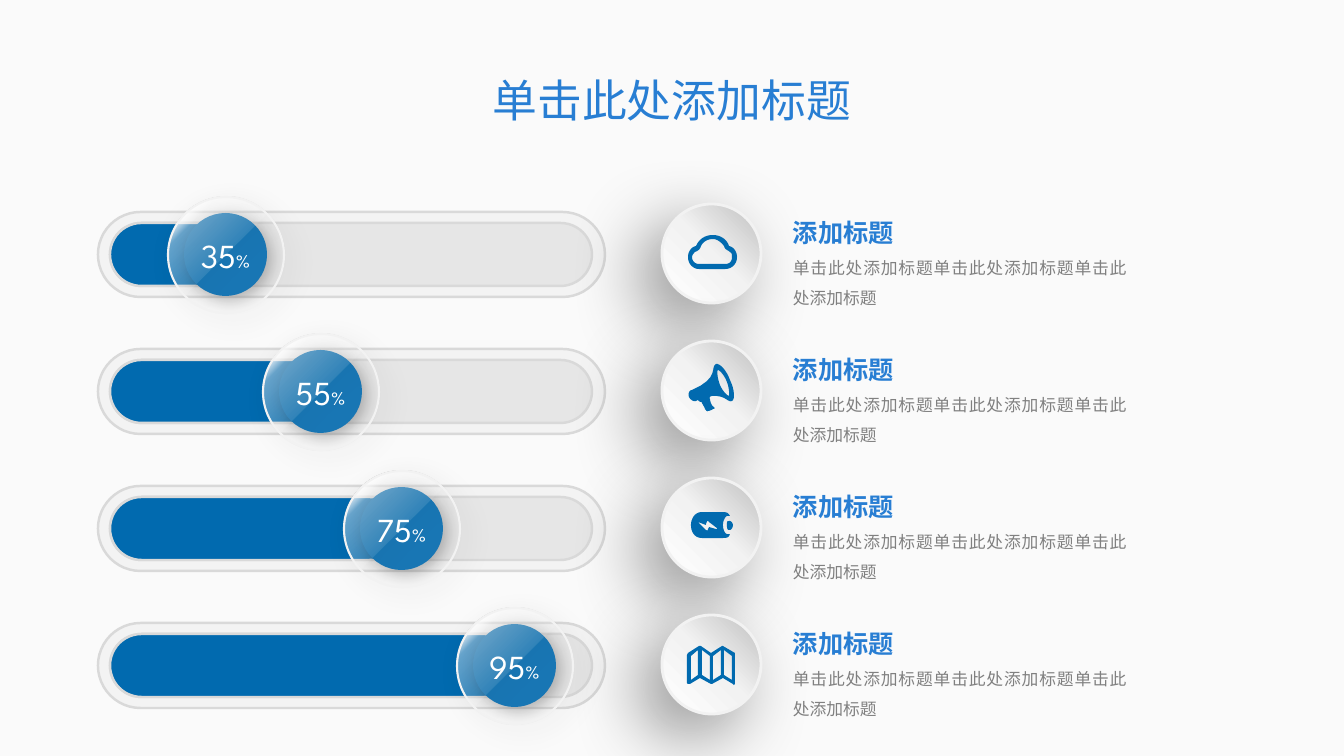
from lxml import etree
from pptx import Presentation
from pptx import util as u
from pptx.dml.color import RGBColor
from pptx.enum import shapes, text
from pptx.oxml.ns import qn

PX = 914400 / 100.8
PITCH = 137
COLORS = {
    "background": "FAFAFA", "title": "287ED3", "body": "808080", "blue": "016AAF",
    "white": "FFFFFF", "frame": "F3F3F3", "track": "E6E6E6", "outline": "D9D9D9",
    "rim": "F2F2F2", "shade": "BFBFBF", "black": "000000",
}
LATIN, CJK = "League Spartan", "Noto Sans CJK SC"
GLASS = [(15, "white", 87), (22, "white", 40), (50, "white", 19), (50, "white", 10)]
DISC = [(0, "white", 100), (51, "rim", 100), (100, "shade", 100)]

# Bar length, knob left edge, value
LEVELS = [(125, 184, "35"), (223, 279, "55"), (291, 360, "75"), (406, 473, "95")]

# Each contour is a start point followed by line ends (2 numbers) or Bézier curves (6 numbers)
CLOUD = [
    [(63, 65), (37, 65), (31, 65, 26, 60, 26, 53), (26, 48, 29, 43, 34, 42),
     (37, 35, 43, 31, 51, 31), (58, 31, 65, 35, 67, 42), (72, 43, 75, 48, 75, 53),
     (75, 60, 70, 65, 63, 65)],
    [(68, 48), (66, 46, 63, 46, 62, 42), (59, 38, 55, 35, 51, 35), (45, 35, 41, 38, 39, 42),
     (38, 46, 35, 47, 33, 48), (32, 49, 30, 51, 30, 53), (30, 57, 33, 60, 37, 60), (63, 60),
     (68, 60, 70, 57, 70, 53), (70, 51, 70, 49, 68, 48)],
]
MEGAPHONE = [
    [(68, 39), (65, 30, 58, 22, 54, 23), (48, 26, 58, 37, 30, 49), (27, 49, 26, 53, 27, 56),
     (28, 58, 31, 61, 34, 60), (36, 59), (38, 62, 40, 60, 40, 62), (41, 64, 43, 67, 43, 68),
     (44, 69, 45, 71, 46, 70), (47, 70, 50, 69, 51, 68), (53, 68, 53, 67, 52, 66),
     (52, 66, 50, 65, 50, 64), (49, 63, 48, 59, 48, 58), (47, 57, 48, 55, 50, 55),
     (64, 54, 66, 62, 70, 60), (73, 59, 73, 49, 68, 39)],
    [(67, 55), (66, 55, 61, 51, 58, 44), (55, 36, 55, 29, 56, 29), (57, 29, 62, 33, 65, 41),
     (68, 49, 67, 54, 67, 55)],
]
BATTERY = [
    [(61, 47), (61, 42, 64, 38, 65, 38), (68, 38), (67, 36, 66, 34, 61, 34), (40, 34),
     (32, 34, 29, 42, 29, 47), (29, 53, 32, 60, 40, 60), (61, 60), (66, 60, 67, 59, 68, 56),
     (65, 56), (64, 56, 61, 53, 61, 47)],
    [(55, 51), (54, 51), (47, 49), (47, 49, 47, 50, 46, 51), (46, 52, 46, 53, 44, 52),
     (37, 45), (36, 44), (44, 47), (44, 47, 44, 45, 45, 44), (45, 43, 46, 42, 47, 44), (55, 50)],
    [(68, 43), (65, 43, 65, 43, 65, 47), (65, 52, 66, 52, 68, 52), (69, 52, 71, 50, 71, 47),
     (71, 45, 69, 43, 68, 43)],
]
MAP = [
    [(73, 38), (61, 31), (60, 31), (49, 38), (39, 31), (37, 31), (26, 38), (25, 40), (25, 68),
     (26, 69), (28, 69), (38, 63), (49, 69), (50, 69), (61, 63), (71, 69), (72, 70), (73, 69),
     (73, 40)],
    [(36, 60), (29, 65), (29, 41), (36, 35)],
    [(48, 65), (40, 60), (40, 35), (48, 41)],
    [(59, 60), (51, 65), (51, 41), (59, 35)],
    [(70, 65), (62, 60), (62, 35), (70, 41)],
]


def px(*lengths):
    return [u.Emu(round(length * PX)) for length in lengths]


def rgb(name):
    return RGBColor.from_string(COLORS[name])


def add_color(parent, color, alpha):
    node = etree.SubElement(parent, qn("a:srgbClr"), val=COLORS[color])
    etree.SubElement(node, qn("a:alpha"), val=str(alpha * 1000))


def flatten(contour, steps=8):
    """Turn a contour of lines and Bézier curves into points."""
    points = [contour[0]]
    for segment in contour[1:]:
        if len(segment) == 2:
            points.append(segment)
            continue
        (x0, y0), (x1, y1, x2, y2, x3, y3) = points[-1], segment
        for step in range(1, steps + 1):
            t = step / steps
            a, b, c, d = (1 - t) ** 3, 3 * t * (1 - t) ** 2, 3 * t * t * (1 - t), t ** 3
            points.append((a * x0 + b * x1 + c * x2 + d * x3, a * y0 + b * y1 + c * y2 + d * y3))
    return points


class Board:
    def __init__(self, slide):
        self.slide = slide
        slide.background.fill.solid()
        slide.background.fill.fore_color.rgb = rgb("background")

    def style(self, paragraph, size, color, latin=LATIN, bold=False):
        font = paragraph.font
        font.size, font.bold, font.name = u.Pt(size), bold, latin
        font.color.rgb = rgb(color)
        etree.SubElement(font._element, qn("a:ea"), typeface=CJK)

    def title(self, wording, *box):
        title = self.slide.shapes.title
        title.left, title.top, title.width, title.height = px(*box)
        frame = title.text_frame
        frame.text = wording
        frame.word_wrap = False
        frame.vertical_anchor = text.MSO_ANCHOR.MIDDLE
        frame.paragraphs[0].alignment = text.PP_ALIGN.CENTER
        self.style(frame.paragraphs[0], 32, "title", CJK)

    def shape(self, kind, box, fill, line=None, width=1.75, angle=0, shadow=None):
        """Draw a preset; fill is a colour name or a list of gradient stops."""
        shape = self.slide.shapes.add_shape(kind, *px(*box))
        shape.shadow.inherit = False
        if kind == shapes.MSO_SHAPE.ROUNDED_RECTANGLE:
            shape.adjustments[0] = 0.5
        if isinstance(fill, str):
            shape.fill.solid()
            shape.fill.fore_color.rgb = rgb(fill)
        else:
            shape.fill.gradient()
            shape.fill.gradient_angle = 360 - angle
            stops = shape._element.spPr.find(".//" + qn("a:gsLst"))
            for stop in list(stops):
                stops.remove(stop)
            for position, color, alpha in fill:
                add_color(etree.SubElement(stops, qn("a:gs"), pos=str(position * 1000)), color, alpha)
        if line:
            shape.line.color.rgb = rgb(line)
            shape.line.width = u.Pt(width)
        else:
            shape.line.fill.background()
        if shadow:
            alpha, blur, distance, direction = shadow
            effects = shape._element.spPr.find(qn("a:effectLst"))
            outer = etree.SubElement(
                effects, qn("a:outerShdw"), blurRad=str(u.Pt(blur)), dist=str(u.Pt(distance)),
                dir=str(direction * 60000), algn="ctr", rotWithShape="0")
            add_color(outer, "black", alpha)

    def frame(self, *box):
        frame = self.slide.shapes.add_textbox(*px(*box)).text_frame
        frame.word_wrap = True
        return frame

    def bar(self, top, length):
        for box, fill in (((98, top, 507, 85), "frame"), ((110, top + 11, 482, 63), "track"),
                          ((110, top + 11, length, 63), "blue")):
            self.shape(shapes.MSO_SHAPE.ROUNDED_RECTANGLE, box, fill, "outline")

    def knob(self, left, top, value):
        oval = shapes.MSO_SHAPE.OVAL
        self.shape(oval, (left, top, 83, 83), "blue", shadow=(30, 12, 4, 45))
        self.shape(oval, (left - 16, top - 16, 116, 116), GLASS, "rim", 1.5, 45, (15, 18, 7, 45))
        paragraph = self.frame(left + 2, top + 17, 79, 50).paragraphs[0]
        paragraph.alignment = text.PP_ALIGN.CENTER
        self.style(paragraph, 24, "white")
        for wording, size in ((value, 24), ("%", 14)):
            run = paragraph.add_run()
            run.text, run.font.size = wording, u.Pt(size)

    def icon(self, left, top, contours):
        outlines = [[px(left + x, top + y) for x, y in flatten(c)] for c in contours]
        builder = self.slide.shapes.build_freeform(*outlines[0][0], scale=1.0)
        builder.add_line_segments(outlines[0][1:], close=True)
        for outline in outlines[1:]:
            builder.move_to(*outline[0])
            builder.add_line_segments(outline[1:], close=True)
        icon = builder.convert_to_shape()
        icon.shadow.inherit = False
        icon.fill.solid()
        icon.fill.fore_color.rgb = rgb("blue")
        icon.line.fill.background()

    def entry(self, top, contours, heading, body):
        self.shape(shapes.MSO_SHAPE.OVAL, (662, top, 99, 99), DISC, "rim", 2, 315, (41, 53, 21, 135))
        self.icon(662, top, contours)
        frame = self.frame(783, top - 7, 354, 117)
        frame.text = f"{heading}\n{body}"
        for paragraph in frame.paragraphs:
            paragraph.line_spacing = 1.5
        self.style(frame.paragraphs[0], 18, "title", bold=True)
        self.style(frame.paragraphs[1], 12, "body")
        frame.paragraphs[1].alignment = text.PP_ALIGN.JUSTIFY


def main():
    deck = Presentation()
    deck.slide_width, deck.slide_height = px(1344, 756)
    board = Board(deck.slides.add_slide(deck.slide_layouts[5]))
    board.title("单击此处添加标题", 481, 67, 382, 65)
    for row, (length, _, _) in enumerate(LEVELS):
        board.bar(212 + row * PITCH, length)
    for row, (_, left, value) in enumerate(LEVELS):
        board.knob(left, 213 + row * PITCH, value)
    for row, contours in enumerate((CLOUD, MEGAPHONE, BATTERY, MAP)):
        board.entry(204 + row * PITCH, contours, "添加标题", "单击此处添加标题" * 3)
    deck.save("out.pptx")


if __name__ == "__main__":
    main()
